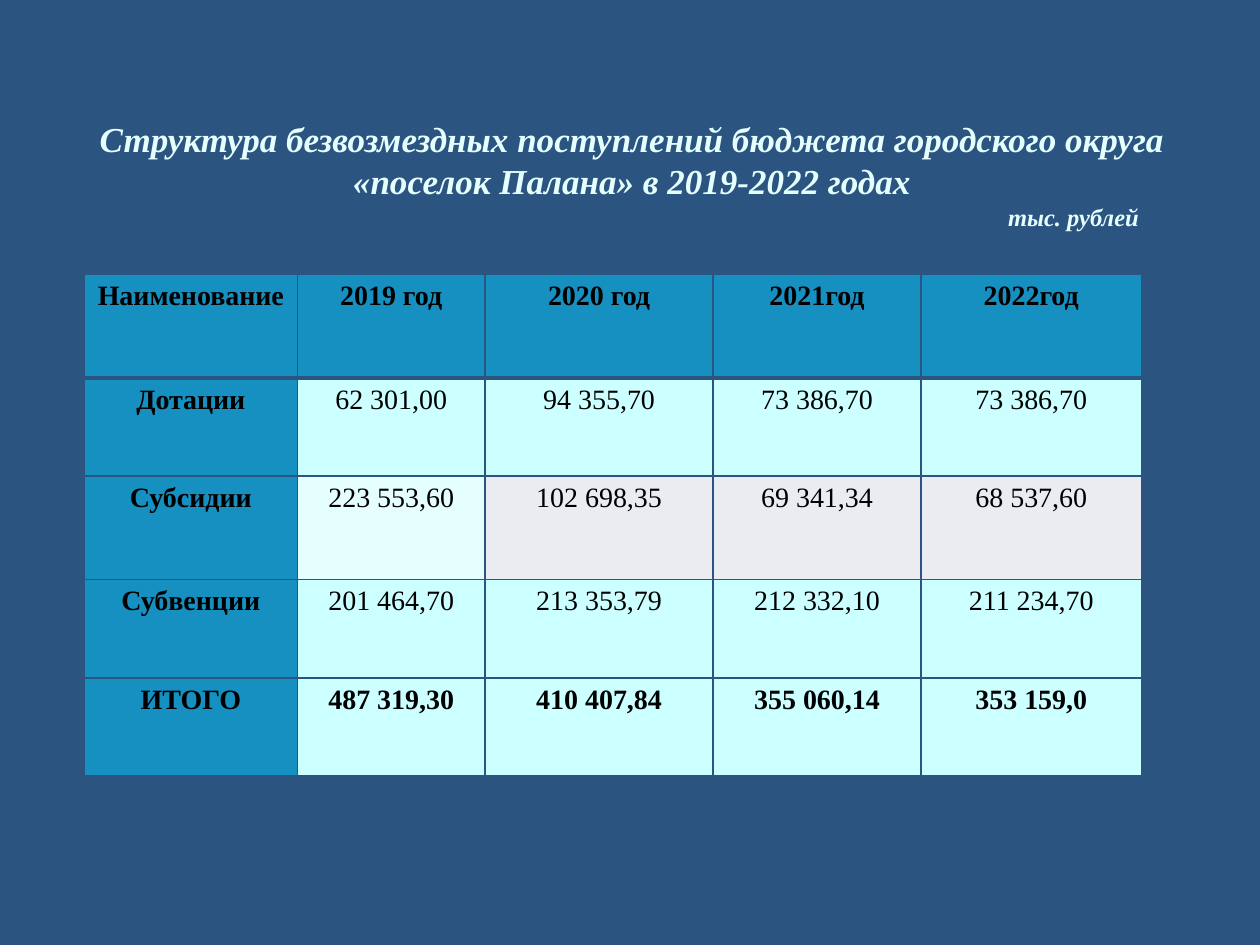
from dataclasses import dataclass

from lxml.etree import SubElement
from pptx import Presentation
from pptx.dml.color import RGBColor as RGB
from pptx.enum.text import MSO_ANCHOR as Anchor, PP_ALIGN as Align
from pptx.oxml.ns import qn
from pptx.util import Inches, Pt

NAVY = RGB(0x2B, 0x54, 0x81)
CYAN = RGB(0x00, 0xCC, 0xFF)
PALE = RGB(0xCC, 0xFF, 0xFF)
MINT = RGB(0xE5, 0xFF, 0xFF)
GRAY = RGB(0xEA, 0xEC, 0xF2)
BLACK = RGB(0x00, 0x00, 0x00)
FONT = "Times New Roman"
WIDTHS = (1.69, 1.49, 1.81, 1.65, 1.75)


@dataclass
class Row:
    texts: tuple[str, ...]
    height: float = 0.78
    fills: tuple[RGB, ...] = (PALE,) * 4
    bold: bool = False


@dataclass
class Label:
    text: str
    box: tuple[float, float, float, float]
    size: int
    pitch: int
    align: Align


ROWS = (
    Row(("Наименование", "2019 год", "2020 год", "2021год", "2022год"), 0.82, (CYAN,) * 4, True),
    Row(("Дотации", "62 301,00", "94 355,70", "73 386,70", "73 386,70")),
    Row(("Субсидии", "223 553,60", "102 698,35", "69 341,34", "68 537,60"), 0.82, (MINT, GRAY, GRAY, GRAY)),
    Row(("Субвенции", "201 464,70", "213 353,79", "212 332,10", "211 234,70")),
    Row(("ИТОГО", "487 319,30", "410 407,84", "355 060,14", "353 159,0"), bold=True),
)
LABELS = (
    Label("Структура безвозмездных поступлений бюджета городского округа «поселок Палана» в 2019-2022 годах",
          (0.68, 0.93, 8.67, 0.67), 20, 24, Align.CENTER),
    Label("тыс. рублей", (7.04, 1.6, 2, 0.24), 14, 17, Align.RIGHT),
)


def write(frame, text: str, *, size: int, color: RGB, bold: bool = False,
          italic: bool = False, align: Align = Align.CENTER, pitch: int | None = None) -> None:
    para = frame.paragraphs[0]
    para.alignment = align
    if pitch:
        para.line_spacing = Pt(pitch)
    run = para.add_run()
    run.text = text
    font = run.font
    font.name, font.size, font.bold, font.italic = FONT, Pt(size), bold, italic
    font.color.rgb = color


def add_label(slide, label: Label) -> None:
    frame = slide.shapes.add_textbox(*map(Inches, label.box)).text_frame
    frame.word_wrap = True
    frame.vertical_anchor = Anchor.BOTTOM
    frame.margin_left = frame.margin_right = frame.margin_top = frame.margin_bottom = 0
    write(frame, label.text, size=label.size, color=MINT, bold=True, italic=True,
          align=label.align, pitch=label.pitch)


def paint(cell, color: RGB) -> None:
    cell.fill.solid()
    cell.fill.fore_color.rgb = color
    if color == CYAN:
        tone = next(cell._tc.tcPr.iter(qn("a:srgbClr")))
        SubElement(tone, qn("a:alpha"), val="50000")


def edge(cell, top: int, bottom: int) -> None:
    props = cell._tc.tcPr
    for index, (side, width) in enumerate(zip("LRTB", (1, 1, top, bottom))):
        line = SubElement(props, qn(f"a:ln{side}"), w=str(Pt(width)))
        fill = SubElement(line, qn("a:solidFill"))
        SubElement(fill, qn("a:srgbClr"), val=str(NAVY))
        props.insert(index, line)


def add_grid(slide) -> None:
    high = sum(row.height for row in ROWS)
    size = map(Inches, (0.67, 2.18, sum(WIDTHS), high))
    table = slide.shapes.add_table(len(ROWS), len(WIDTHS), *size).table
    for column, width in zip(table.columns, WIDTHS):
        column.width = Inches(width)
    for r, row in enumerate(ROWS):
        table.rows[r].height = Inches(row.height)
        for c, (text, color) in enumerate(zip(row.texts, (CYAN, *row.fills))):
            cell = table.cell(r, c)
            cell.margin_left = cell.margin_right = Inches(0.08)
            paint(cell, color)
            edge(cell, 3 if r == 1 else 1, 3 if r == 0 else 1)
            write(cell.text_frame, text, size=16, color=BLACK, bold=row.bold or c == 0)


def main() -> None:
    """Build the slide on grants received by the town budget."""
    deck = Presentation()
    deck.slide_width, deck.slide_height = Inches(10), Inches(7.5)
    slide = deck.slides.add_slide(deck.slide_layouts[6])
    back = slide.background.fill
    back.solid()
    back.fore_color.rgb = NAVY
    for label in LABELS:
        add_label(slide, label)
    add_grid(slide)
    deck.save("out.pptx")


if __name__ == "__main__":
    main()
